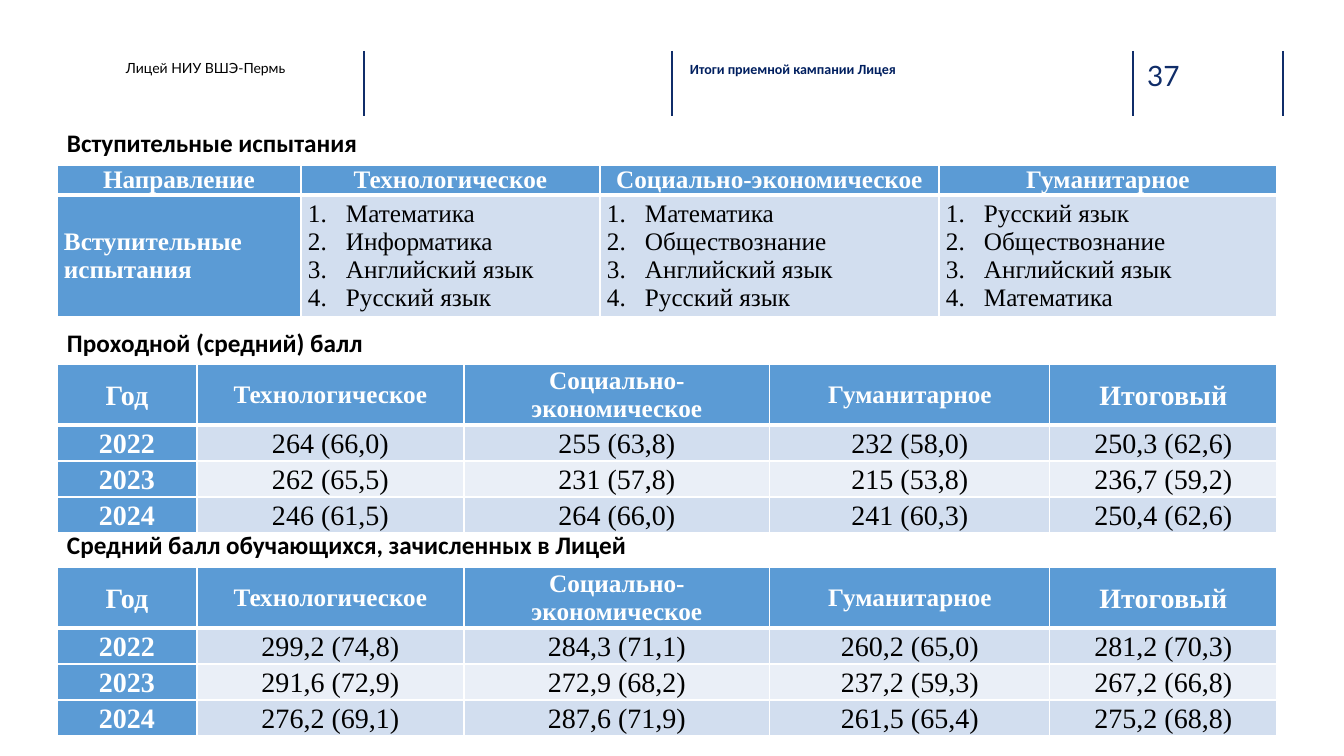
from lxml import etree
from pptx import Presentation
from pptx.dml.color import RGBColor
from pptx.enum.shapes import MSO_CONNECTOR
from pptx.enum.text import MSO_ANCHOR, MSO_AUTO_SIZE, PP_ALIGN
from pptx.oxml.ns import qn
from pptx.util import Emu, Pt

PX = 914400 / 100.8
LEFT, CENTER = PP_ALIGN.LEFT, PP_ALIGN.CENTER
MIDDLE = MSO_ANCHOR.MIDDLE
FIT_SHAPE, NO_FIT = MSO_AUTO_SIZE.SHAPE_TO_FIT_TEXT, MSO_AUTO_SIZE.NONE
STRAIGHT = MSO_CONNECTOR.STRAIGHT

NAVY = RGBColor(0x10, 0x2D, 0x69)
INK_BLUE = RGBColor(0x00, 0x1F, 0x5F)
BLACK = RGBColor(0x00, 0x00, 0x00)
WHITE = RGBColor(0xFF, 0xFF, 0xFF)
BLUE = RGBColor(0x5B, 0x9B, 0xD5)
BAND_DARK = RGBColor(0xD2, 0xDE, 0xEF)
BAND_LIGHT = RGBColor(0xEA, 0xEF, 0xF7)

TABLE_LEFT = 57
DIRECTIONS = ["Технологическое", "Социально-экономическое", "Гуманитарное"]
EXAMS = [
    ["Направление", *DIRECTIONS],
    ["Вступительные испытания",
     ["Математика", "Информатика", "Английский язык", "Русский язык"],
     ["Математика", "Обществознание", "Английский язык", "Русский язык"],
     ["Русский язык", "Обществознание", "Английский язык", "Математика"]],
]
SCORE_HEADER = ["Год", *DIRECTIONS, "Итоговый"]
PASSING_SCORES = [
    SCORE_HEADER,
    ["2022", "264 (66,0)", "255 (63,8)", "232 (58,0)", "250,3 (62,6)"],
    ["2023", "262 (65,5)", "231 (57,8)", "215 (53,8)", "236,7 (59,2)"],
    ["2024", "246 (61,5)", "264 (66,0)", "241 (60,3)", "250,4 (62,6)"],
]
ENROLLED_SCORES = [
    SCORE_HEADER,
    ["2022", "299,2 (74,8)", "284,3 (71,1)", "260,2 (65,0)", "281,2 (70,3)"],
    ["2023", "291,6 (72,9)", "272,9 (68,2)", "237,2 (59,3)", "267,2 (66,8)"],
    ["2024", "276,2 (69,1)", "287,6 (71,9)", "261,5 (65,4)", "275,2 (68,8)"],
]
EXAM_GRID = {"cols": [244, 299, 339, 338], "heights": [30, 121], "size": 18}
SCORE_GRID = {"cols": [140, 267, 306, 280, 227], "heights": [61, 36, 36, 35], "size": 20}


def px(n):
    return Emu(round(n * PX))


def write(p, text, size, font, color, bold=False):
    r = p.add_run()
    r.text = text
    for name, value in {"size": Pt(size), "name": font, "bold": bold}.items():
        setattr(r.font, name, value)
    r.font.color.rgb = color


def number(p):
    """Make the paragraph an item of a numbered list with a hanging indent."""
    pPr = p._p.get_or_add_pPr()
    pPr.set("marL", str(px(38)))
    pPr.set("indent", str(px(-38)))
    etree.SubElement(pPr, qn("a:buAutoNum"), type="arabicPeriod")
    tabs = etree.SubElement(pPr, qn("a:tabLst"))
    etree.SubElement(tabs, qn("a:tab"), pos=str(px(50)), algn="l")


def add_borders(cell, bottom):
    tcPr = cell._tc.get_or_add_tcPr()
    for side, width in {"L": 1, "R": 1, "T": 1, "B": bottom}.items():
        ln = etree.SubElement(tcPr, qn(f"a:ln{side}"), w=str(Pt(width)))
        fill = etree.SubElement(ln, qn("a:solidFill"))
        etree.SubElement(fill, qn("a:srgbClr"), val=str(WHITE))


class Deck:
    heading_font, table_font, header_font = "Calibri", "Times New Roman", "Lato"

    def __init__(self, prs):
        self.s = prs.slides.add_slide(prs.slide_layouts[6])

    def divider(self, x):
        line = self.s.shapes.add_connector(STRAIGHT, px(x), px(51), px(x), px(116))
        line.line.color.rgb = NAVY
        line.line.width = Pt(1)
        etree.SubElement(line._element.spPr, qn("a:effectLst"))

    def text(self, box, text, size, font, color, bold=False, inset=0, fit=NO_FIT):
        """Add a text box; inset is the side margin, twice the top and bottom ones."""
        tf = self.s.shapes.add_textbox(*map(px, box)).text_frame
        for name, value in {
            "word_wrap": True, "auto_size": fit,
            "margin_left": px(inset), "margin_right": px(inset),
            "margin_top": px(inset / 2), "margin_bottom": px(inset / 2),
        }.items():
            setattr(tf, name, value)
        write(tf.paragraphs[0], text, size, font, color, bold)

    def heading(self, y, text):
        self.text((TABLE_LEFT, y, 1188, 40), text, 18, self.heading_font, BLACK,
                  bold=True, inset=10, fit=FIT_SHAPE)

    def table(self, y, rows, cols, heights, size):
        frame = self.s.shapes.add_table(len(rows), len(cols), px(TABLE_LEFT), px(y),
                                        px(sum(cols)), px(sum(heights)))
        table = frame.table
        for column, width in zip(table.columns, cols):
            column.width = px(width)
        for row, height in zip(table.rows, heights):
            row.height = px(height)
        for i, row in enumerate(rows):
            for j, value in enumerate(row):
                self.cell(table.cell(i, j), value, i, j, size)

    def cell(self, cell, value, i, j, size):
        """Fill one cell; a list becomes numbered lines, row 0 and column 0 are headers."""
        header = i == 0 or j == 0
        numbered = isinstance(value, list)
        lines = value if numbered else [value]
        if value in DIRECTIONS:
            size = 18
        for name, margin in {"margin_left": 7, "margin_right": 7,
                             "margin_top": 0, "margin_bottom": 0}.items():
            setattr(cell, name, px(margin))
        cell.vertical_anchor = MIDDLE
        add_borders(cell, bottom=3 if i == 0 else 1)
        cell.fill.solid()
        band = BAND_DARK if i % 2 else BAND_LIGHT
        cell.fill.fore_color.rgb = BLUE if header else band
        tf = cell.text_frame
        for k, line in enumerate(lines):
            p = tf.add_paragraph() if k else tf.paragraphs[0]
            if numbered:
                number(p)
            p.alignment = CENTER if i == 0 or size == 20 else LEFT
            if size == 20:
                p.line_spacing = 1.07
            write(p, line, size, self.table_font, WHITE if header else BLACK, header)


def main():
    prs = Presentation()
    prs.slide_width, prs.slide_height = px(1344), px(756)
    deck = Deck(prs)

    for x in (364, 672, 1133, 1283):
        deck.divider(x)
    deck.text((1147, 58, 74, 34), "37", 20, deck.header_font, NAVY, fit=FIT_SHAPE)
    deck.text((126, 60, 210, 45), "Лицей НИУ ВШЭ-Пермь", 10, deck.header_font, BLACK)
    deck.text((690, 61, 228, 45), "Итоги приемной кампании Лицея", 10,
              deck.heading_font, INK_BLUE, bold=True)

    deck.heading(122, "Вступительные испытания")
    deck.table(165, EXAMS, **EXAM_GRID)
    deck.heading(322, "Проходной (средний) балл")
    deck.table(364, PASSING_SCORES, **SCORE_GRID)
    deck.heading(524, "Средний балл обучающихся, зачисленных в Лицей")
    deck.table(567, ENROLLED_SCORES, **SCORE_GRID)
    prs.save("out.pptx")


if __name__ == "__main__":
    main()
